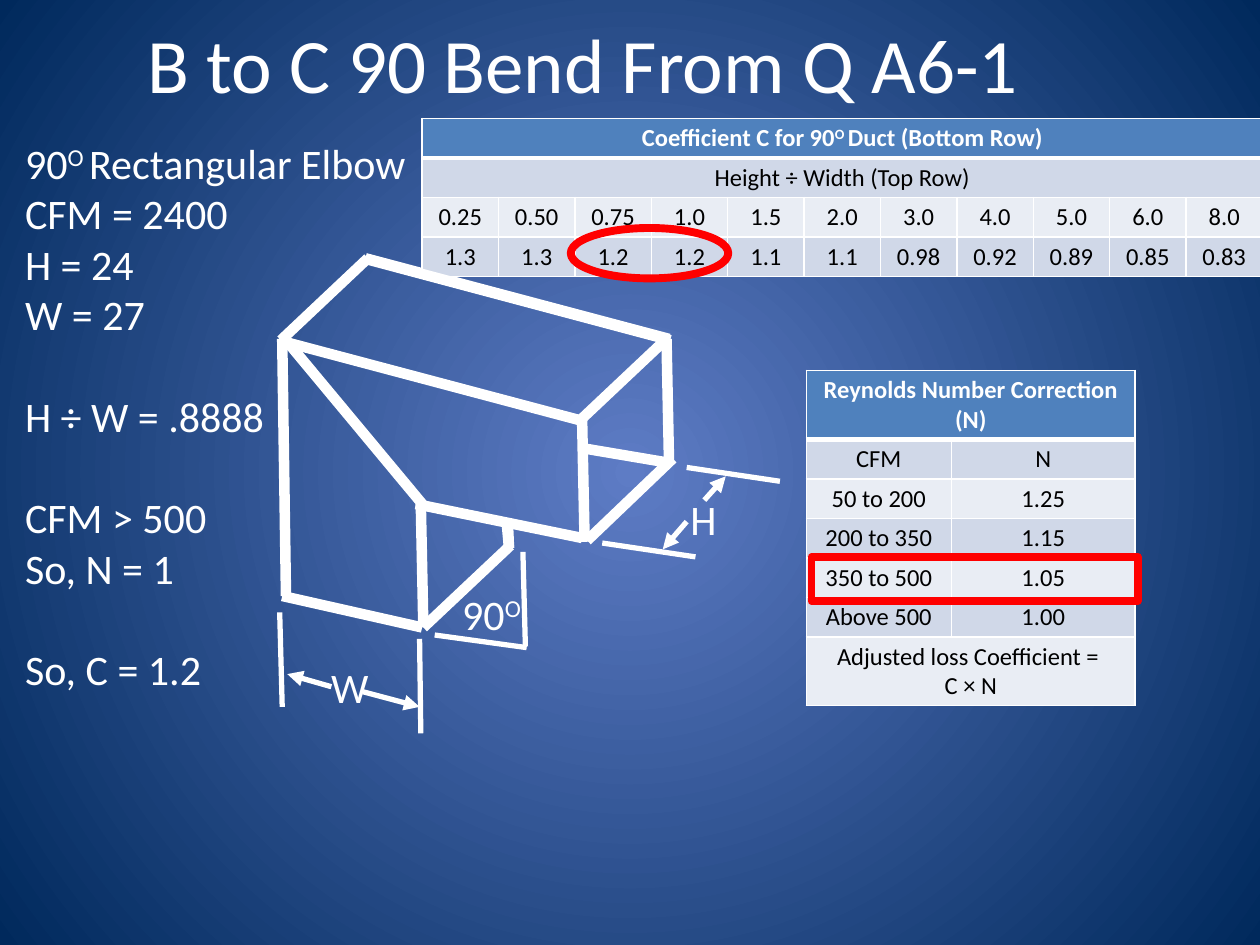
from lxml import etree
from pptx import Presentation
from pptx.dml.color import RGBColor
from pptx.enum import shapes, text
from pptx.oxml import ns
from pptx.util import Inches, Pt

WHITE, BLACK, RED = "FFFFFF", "000000", "FF0000"
HEADER, BAND_DARK, BAND_LIGHT = "4F81BD", "D0D8E8", "E9EDF4"
BLANK_LINE = 29.3

DUCT_EDGES = [
    (2.21, 2.7, 4.62, 3.34), (2.23, 2.7, 2.92, 2.05), (3.3, 4, 4.62, 4.27),
    (2.9, 2.05, 5.31, 2.69), (4.6, 3.34, 5.29, 2.69), (4.66, 4.29, 5.34, 3.64),
    (5.31, 3.68, 5.29, 2.69), (4.64, 4.3, 4.62, 3.32), (3.36, 4.98, 3.34, 4),
    (3.36, 4.98, 4.05, 4.33), (4.04, 4.35, 4.03, 4.13), (2.24, 4.73, 3.35, 4.98),
    (2.27, 4.73, 2.24, 2.69), (2.27, 2.7, 3.36, 4.01), (4.04, 4.35, 4.02, 4.13),
    (4.64, 3.56, 5.29, 3.67),
]
FRONT_TOP_EDGE = (2.92, 2.06, 5.32, 2.7)
EXTENSION_LINES = [
    (5.45, 3.71, 6.19, 3.82), (4.78, 4.31, 5.52, 4.42), (2.22, 4.86, 2.24, 5.61),
    (3.33, 5.07, 3.34, 5.82), (3.45, 5.04, 4.18, 5.14), (4.15, 4.38, 4.17, 5.13),
]
DIMENSION_ARROWS = [
    (5.59, 3.97, 5.76, 3.78), (5.45, 4.14, 5.26, 4.36),
    (2.63, 5.45, 2.28, 5.35), (2.88, 5.49, 3.33, 5.61),
]
DIMENSION_LABELS = [
    ("H", (5.38, 3.87, 0.41, 0.5)),
    ("W", (2.53, 5.2, 0.5, 0.5)),
    ("90^O", (3.57, 4.62, 0.69, 0.5)),
]
CALCULATION = [
    ("90^O ^Rectangular Elbow", 0), ("CFM = 2400", 0), ("H = 24", 0), ("W = 27", 0),
    ("H ÷ W = .8888", BLANK_LINE), ("CFM ˃ 500", BLANK_LINE), ("So, N = 1", 0),
    ("So, C = 1.2", BLANK_LINE),
]
COEFFICIENTS = [
    ["Coefficient C for 90^O ^Duct (Bottom Row)"],
    ["Height ÷ Width (Top Row)"],
    ["0.25", "0.50", "0.75", "1.0", "1.5", "2.0", "3.0", "4.0", "5.0", "6.0", "8.0"],
    ["1.3", "1.3", "1.2", "1.2", "1.1", "1.1", "0.98", "0.92", "0.89", "0.85", "0.83"],
]
CORRECTIONS = [
    ["Reynolds Number Correction (N)"],
    ["CFM", "N"],
    ["50 to 200", "1.25"],
    ["200 to 350", "1.15"],
    ["350 to 500", "1.05"],
    ["Above 500", "1.00"],
    ["Adjusted loss Coefficient = \nC × N"],
]


def rgb(value):
    """Turn a hex string into a colour."""
    return RGBColor.from_string(value)


def paint_background(slide):
    """Fill the slide with a circular gradient."""
    fill = slide.background.fill
    fill.gradient()
    for stop, position, color in zip(fill.gradient_stops, (0, 1), ("5E7CC5", "00295C")):
        stop.position = position
        stop.color.rgb = rgb(color)
    gradient = slide.element.find(".//" + ns.qn("a:gradFill"))
    gradient.remove(gradient.find(ns.qn("a:lin")))
    circle = etree.SubElement(gradient, ns.qn("a:path"), {"path": "circle"})
    sides = dict.fromkeys("ltrb", "50000")
    etree.SubElement(circle, ns.qn("a:fillToRect"), sides)


def write_paragraph(paragraph, content, size, color, bold=False):
    """Write text whose parts between carets are superscript."""
    font = paragraph.font
    font.name, font.size, font.bold = "Calibri", Pt(size), bold
    font.color.rgb = rgb(color)
    for index, part in enumerate(content.split("^")):
        if part:
            run = paragraph.add_run()
            run.text = part
            if index % 2:
                run.font._element.set("baseline", "30000")


def add_text(slide, lines, box):
    """Add an unwrapped text box from (content, space before) pairs."""
    frame = slide.shapes.add_textbox(*map(Inches, box)).text_frame
    frame.word_wrap = False
    frame.auto_size = text.MSO_AUTO_SIZE.SHAPE_TO_FIT_TEXT
    for index, (content, space) in enumerate(lines):
        paragraph = frame.add_paragraph() if index else frame.paragraphs[0]
        paragraph.space_before = Pt(space)
        write_paragraph(paragraph, content, 24, WHITE)


def add_line(slide, ends, width, arrow=False):
    """Add a white straight line, optionally with an arrowhead at its end."""
    line = slide.shapes.add_connector(
        shapes.MSO_CONNECTOR.STRAIGHT, *map(Inches, ends))
    line.line.width = Pt(width)
    line.line.color.rgb = rgb(WHITE)
    if arrow:
        outline = line.line._get_or_add_ln()
        etree.SubElement(outline, ns.qn("a:tailEnd"), type="triangle")
    etree.SubElement(line._element.spPr, ns.qn("a:effectLst"))


def add_highlight(slide, kind, box):
    """Add an unfilled red outline."""
    mark = slide.shapes.add_shape(kind, *map(Inches, box))
    mark.shadow.inherit = False
    mark.fill.background()
    mark.line.color.rgb = rgb(RED)
    mark.line.width = Pt(4.5)


def set_borders(cell, row):
    """Draw white cell borders, thicker below the header."""
    properties = cell._tc.get_or_add_tcPr()
    for index, side in enumerate("LRTB"):
        thick = (side, row) in (("B", 0), ("T", 1))
        border = etree.Element(ns.qn("a:ln" + side), w=str(Pt(3 if thick else 1)))
        fill = etree.SubElement(border, ns.qn("a:solidFill"))
        etree.SubElement(fill, ns.qn("a:srgbClr"), val=WHITE)
        properties.insert(index, border)


def add_banded_table(slide, rows, box, widths, heights):
    """Add a table in which a row with a single entry spans all columns."""
    table = slide.shapes.add_table(
        len(rows), len(widths), *map(Inches, box)).table
    for column, width in zip(table.columns, widths):
        column.width = Inches(width)
    for r, (entries, height) in enumerate(zip(rows, heights)):
        table.rows[r].height = Inches(height)
        if len(entries) == 1:
            table.cell(r, 0).merge(table.cell(r, len(widths) - 1))
        for c in range(len(widths)):
            cell = table.cell(r, c)
            cell.fill.solid()
            band = BAND_DARK if r % 2 else BAND_LIGHT
            cell.fill.fore_color.rgb = rgb(band if r else HEADER)
            set_borders(cell, r)
        for c, entry in enumerate(entries):
            cell = table.cell(r, c)
            cell.vertical_anchor = text.MSO_ANCHOR.MIDDLE
            cell.margin_left = cell.margin_right = Inches(0.07)
            cell.margin_top = cell.margin_bottom = Inches(0.04)
            for index, content in enumerate(entry.split("\n")):
                frame = cell.text_frame
                paragraph = frame.add_paragraph() if index else frame.paragraphs[0]
                paragraph.alignment = text.PP_ALIGN.CENTER
                write_paragraph(paragraph, content, 14, BLACK if r else WHITE, r == 0)


def set_title(slide, content, box):
    """Place and format the slide title."""
    title = slide.shapes.title
    title.left, title.top, title.width, title.height = map(Inches, box)
    paragraph = title.text_frame.paragraphs[0]
    paragraph.alignment = text.PP_ALIGN.CENTER
    write_paragraph(paragraph, content, 44, WHITE)


def main():
    """Build the duct bend slide."""
    deck = Presentation()
    deck.slide_width, deck.slide_height = Inches(10), Inches(7.5)
    slide = deck.slides.add_slide(deck.slide_layouts[5])
    paint_background(slide)
    set_title(slide, "B to C 90 Bend From Q A6-1", (0.13, -0.13, 9, 1.25))
    for ends in DUCT_EDGES:
        add_line(slide, ends, 6)
    for ends in EXTENSION_LINES:
        add_line(slide, ends, 3)
    for ends in DIMENSION_ARROWS:
        add_line(slide, ends, 3, arrow=True)
    for label, box in DIMENSION_LABELS:
        add_text(slide, [(label, 0)], box)
    add_banded_table(slide, COEFFICIENTS, (3.35, 0.94, 6.67, 1.23),
                     [6.67 / 11] * 11, [1.23 / 4] * 4)
    add_banded_table(slide, CORRECTIONS, (6.4, 2.94, 2.61, 2.62),
                     [1.15, 1.46], [0.53] + [0.31] * 5 + [0.53])
    add_line(slide, FRONT_TOP_EDGE, 6)
    add_text(slide, CALCULATION, (0.1, 1.04, 3.28, 4.54))
    add_highlight(slide, shapes.MSO_SHAPE.OVAL, (4.53, 1.81, 1.25, 0.4))
    add_highlight(slide, shapes.MSO_SHAPE.RECTANGLE, (6.44, 4.42, 2.59, 0.35))
    deck.save("out.pptx")


if __name__ == "__main__":
    main()
